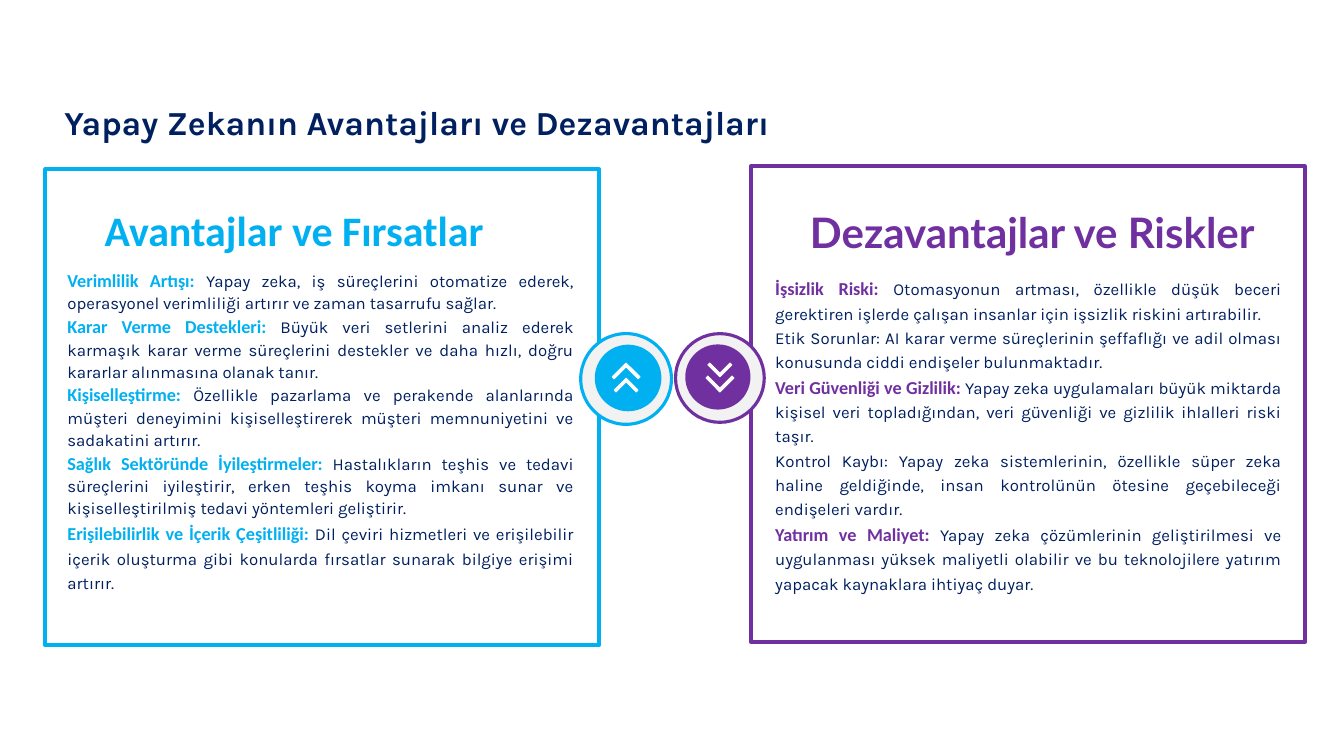
from lxml import etree
from pptx import Presentation
from pptx.dml.color import RGBColor
from pptx.enum.shapes import MSO_SHAPE
from pptx.enum.text import MSO_ANCHOR, PP_ALIGN
from pptx.oxml.ns import qn
from pptx.util import Inches, Pt

RECT, OVAL = MSO_SHAPE.RECTANGLE, MSO_SHAPE.OVAL
TOP, MIDDLE = MSO_ANCHOR.TOP, MSO_ANCHOR.MIDDLE
LEFT, CENTER, JUSTIFY = PP_ALIGN.LEFT, PP_ALIGN.CENTER, PP_ALIGN.JUSTIFY

NAVY = RGBColor(0x00, 0x20, 0x60)
BLUE = RGBColor(0x00, 0xB0, 0xF0)
PURPLE = RGBColor(0x70, 0x30, 0xA0)
PALE = RGBColor(0xF2, 0xF2, 0xF2)
WHITE = RGBColor(0xFF, 0xFF, 0xFF)

PANEL_W, PANEL_H = 5.49, 4.72
BODY_W, BODY_H = 5.22, 0.83
HEADING_H = 0.61

# Each point: (bold lead-in, text, line spacing)
ADVANTAGES = [
    ("Verimlilik Artışı: ", "Yapay zeka, iş süreçlerini otomatize ederek, operasyonel "
     "verimliliği artırır ve zaman tasarrufu sağlar.", 1.1),
    ("Karar Verme Destekleri: ", "Büyük veri setlerini analiz ederek karmaşık karar verme "
     "süreçlerini destekler ve daha hızlı, doğru kararlar alınmasına olanak tanır.", 1.1),
    ("Kişiselleştirme: ", "Özellikle pazarlama ve perakende alanlarında müşteri deneyimini "
     "kişiselleştirerek müşteri memnuniyetini ve sadakatini artırır.", 1.1),
    ("Sağlık Sektöründe İyileştirmeler: ", "Hastalıkların teşhis ve tedavi süreçlerini "
     "iyileştirir, erken teşhis koyma imkanı sunar ve kişiselleştirilmiş tedavi yöntemleri "
     "geliştirir.", 1.1),
    ("Erişilebilirlik ve İçerik Çeşitliliği: ", "Dil çeviri hizmetleri ve erişilebilir içerik "
     "oluşturma gibi konularda fırsatlar sunarak bilgiye erişimi artırır.", 1.2),
]
RISKS = [
    ("İşsizlik Riski: ", "Otomasyonun artması, özellikle düşük beceri gerektiren işlerde "
     "çalışan insanlar için işsizlik riskini artırabilir.", 1.2),
    ("", "Etik Sorunlar: AI karar verme süreçlerinin şeffaflığı ve adil olması konusunda "
     "ciddi endişeler bulunmaktadır.", 1.2),
    ("Veri Güvenliği ve Gizlilik: ", "Yapay zeka uygulamaları büyük miktarda kişisel veri "
     "topladığından, veri güvenliği ve gizlilik ihlalleri riski taşır.", 1.2),
    ("", "Kontrol Kaybı: Yapay zeka sistemlerinin, özellikle süper zeka haline geldiğinde, "
     "insan kontrolünün ötesine geçebileceği endişeleri vardır.", 1.2),
    ("Yatırım ve Maliyet: ", "Yapay zeka çözümlerinin geliştirilmesi ve uygulanması yüksek "
     "maliyetli olabilir ve bu teknolojilere yatırım yapacak kaynaklara ihtiyaç duyar.", 1.2),
]


def add_run(p, text, size=12, font="Karla", color=NAVY, bold=False):
    r = p.add_run()
    r.text = text
    r.font.size, r.font.name, r.font.bold = Pt(size), font, bold
    r.font.color.rgb = color


def add_text_box(s, x, y, w, h, anchor=TOP):
    tf = s.shapes.add_textbox(Inches(x), Inches(y), Inches(w), Inches(h)).text_frame
    tf.word_wrap = True
    tf.vertical_anchor = anchor
    return tf


def add_line_of_text(s, text, x, y, w, h, align=LEFT, anchor=TOP, spacing=1.0, **fmt):
    p = add_text_box(s, x, y, w, h, anchor).paragraphs[0]
    p.alignment, p.line_spacing = align, spacing
    add_run(p, text, **fmt)


def style(sp, fill=None, line=None, width=1):
    sp.shadow.inherit = False
    if fill is None:
        sp.fill.background()
    else:
        sp.fill.solid()
        sp.fill.fore_color.rgb = fill
    if line is None:
        sp.line.fill.background()
    else:
        sp.line.color.rgb = line
        sp.line.width = Pt(width)


def add_shape(s, kind, x, y, w, h, **look):
    sp = s.shapes.add_shape(kind, Inches(x), Inches(y), Inches(w), Inches(h))
    style(sp, **look)


def add_chevrons(s, cx, cy, direction):
    """Draw a wide and a narrow chevron; direction 1 points up, -1 down."""
    thick, half_height = 0.02, 0.15
    builder = None
    for arm, drop in ((0.14, 0), (0.12, 0.15)):
        outline = [(0, 0), (arm, arm), (arm - thick, arm + thick), (0, 2 * thick),
                   (thick - arm, arm + thick), (-arm, arm)]
        points = [(int(Inches(cx + dx)), int(Inches(cy + direction * (drop + dy - half_height))))
                  for dx, dy in outline]
        if builder is None:
            builder = s.shapes.build_freeform(*points[0])
        else:
            builder.move_to(*points[0])
        builder.add_line_segments(points[1:], close=True)
    sp = builder.convert_to_shape()
    style(sp, fill=WHITE, line=WHITE, width=0.5)
    etree.SubElement(sp.line._get_or_add_ln(), qn("a:round"))


def add_badge(s, x, y, size, color, direction):
    add_shape(s, OVAL, x, y, size, size, fill=PALE, line=color, width=2.25)
    disc = size * 0.735
    cx, cy = x + size / 2, y + size / 2 - 0.01
    add_shape(s, OVAL, cx + 0.02 * direction - disc / 2, cy - disc / 2, disc, disc, fill=color)
    add_chevrons(s, cx, cy, direction)


def add_panel(s, x, y, color, heading, heading_at, heading_w, font, points, body_at):
    """Draw a framed panel; heading_at and body_at are offsets from its corner."""
    add_shape(s, RECT, x, y, PANEL_W, PANEL_H, line=color, width=3)
    add_line_of_text(s, heading, x + heading_at[0], y + heading_at[1], heading_w, HEADING_H,
                     align=CENTER, size=30, font=font, color=color, bold=True)
    tf = add_text_box(s, x + body_at[0], y + body_at[1], BODY_W, BODY_H)
    for i, (lead, text, spacing) in enumerate(points):
        p = tf.add_paragraph() if i else tf.paragraphs[0]
        p.alignment, p.line_spacing = JUSTIFY, spacing
        if lead:
            add_run(p, lead, size=13, font="Calibri", color=color, bold=True)
        add_run(p, text)


def main():
    prs = Presentation()
    prs.slide_width, prs.slide_height = Inches(13.33), Inches(7.5)
    s = prs.slides.add_slide(prs.slide_layouts[6])
    add_line_of_text(s, "Yapay Zekanın Avantajları ve Dezavantajları", 0.54, 0.8, 12.46, 0.87,
                     anchor=MIDDLE, spacing=0.9, size=24, bold=True)
    add_panel(s, 0.45, 1.68, BLUE, "Avantajlar ve Fırsatlar", (0.38, 0.3), 4.18, "Calibri",
              ADVANTAGES, (0.12, 0.92))
    add_panel(s, 7.45, 1.65, PURPLE, "Dezavantajlar ve Riskler", (0.2, 0.35), 5.18, "Lato",
              RISKS, (0.14, 1.01))
    add_badge(s, 5.76, 3.31, 0.9, BLUE, 1)
    add_badge(s, 6.7, 3.31, 0.88, PURPLE, -1)
    prs.save("out.pptx")


if __name__ == "__main__":
    main()
